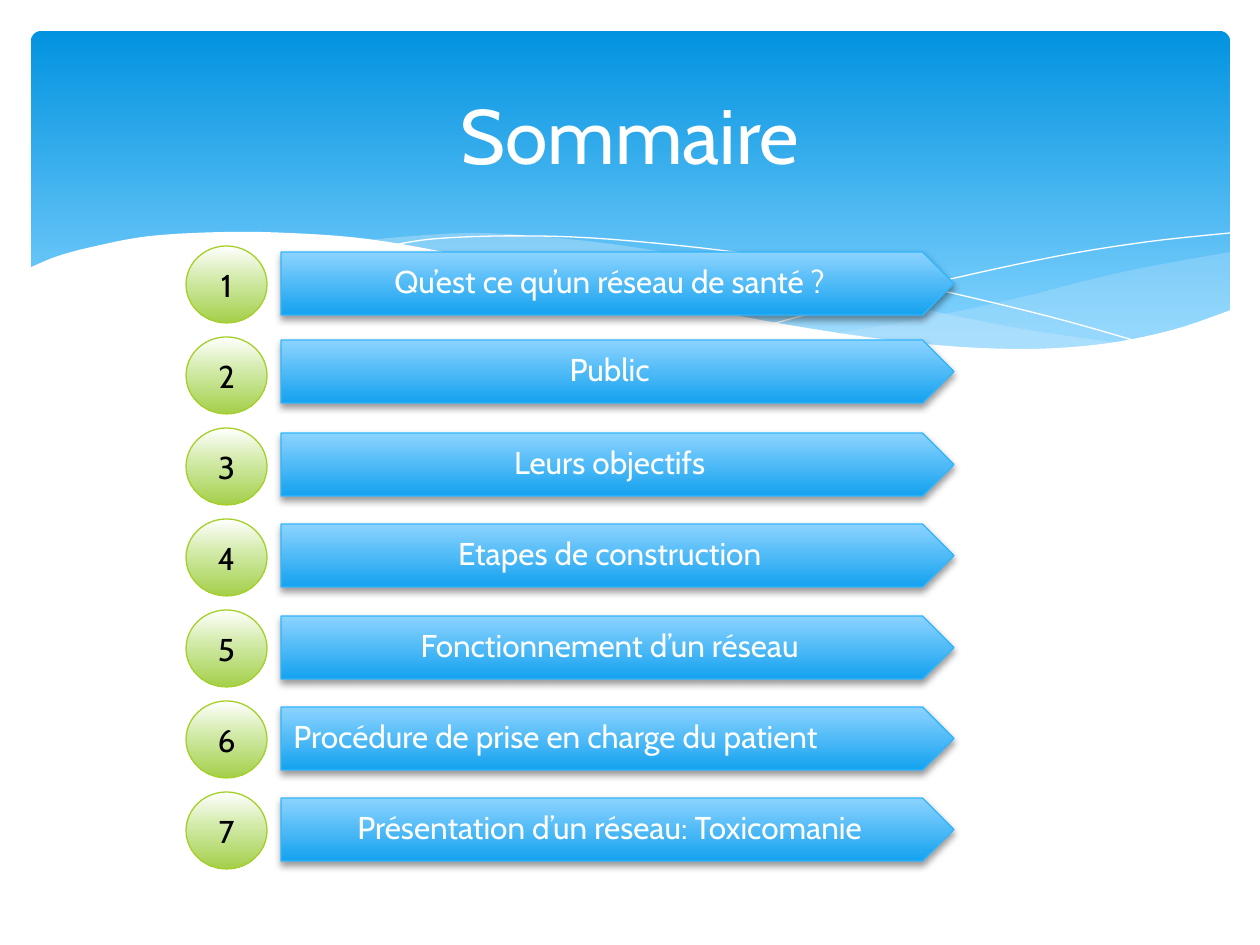
from lxml import etree
from pptx import Presentation
from pptx.dml.color import RGBColor
from pptx.enum.shapes import MSO_SHAPE as Preset
from pptx.enum.text import MSO_ANCHOR as Anchor, PP_ALIGN as Align
from pptx.oxml.ns import qn
from pptx.util import Inches, Pt

EMU_PER_PX = 914400 / 126
FONT = "Cabin"
WHITE = RGBColor(0xFF, 0xFF, 0xFF)
BLACK = RGBColor(0x00, 0x00, 0x00)
PALE_BLUE = RGBColor(0xC6, 0xE7, 0xFC)
LIME = RGBColor(0xA5, 0xD0, 0x28)
SKY = RGBColor(0x31, 0xB6, 0xFD)
BANNER_STOPS = [(0, RGBColor(0x02, 0x93, 0xE0)), (90, RGBColor(0x83, 0xD3, 0xFE))]
BADGE_STOPS = [(0, WHITE), (44, RGBColor(0xD1, 0xEA, 0xA7)), (100, RGBColor(0xA4, 0xCF, 0x4A))]
ARROW_STOPS = [(0, RGBColor(0x8C, 0xD3, 0xFF)), (100, RGBColor(0x14, 0xA2, 0xEF))]

RIGHT_SWELL = [
    [(1230, 252), (1142, 268), (1085, 281), (1014, 299), (919, 319), (833, 334)],
    [(833, 334), (906, 343), (984, 349), (1052, 349), (1110, 344), (1169, 331), (1230, 311)],
]
MIDDLE_SWELL = [
    [(1125, 344), (1017, 328), (890, 302), (793, 280), (717, 262), (632, 247),
     (557, 238), (479, 233), (413, 236), (360, 241)],
    [(360, 241), (456, 255), (566, 280), (713, 312), (819, 333), (910, 345),
     (989, 350), (1056, 350), (1125, 344)],
]
FALLING_LINE = [[(389, 246), (433, 239), (505, 236), (591, 238), (701, 248), (801, 262),
                 (916, 285), (1047, 316), (1143, 343)]]
RISING_LINE = [[(772, 324), (847, 304), (942, 281), (1053, 257), (1146, 242), (1230, 233)]]
WHITE_WAVE = [
    [(1231, 310), (1172, 330), (1102, 344), (1019, 349), (915, 343), (789, 325),
     (667, 301), (563, 277), (460, 255), (368, 239), (290, 233), (223, 232),
     (150, 236), (96, 246), (58, 256), (29, 268)],
    [(29, 415), (1231, 415)],
]
TOPICS = [
    (252, "Qu’est ce qu’un réseau de santé ?", Align.CENTER),
    (340, "Public", Align.CENTER),
    (433, "Leurs objectifs", Align.CENTER),
    (524, "Etapes de construction", Align.CENTER),
    (616, "Fonctionnement d’un réseau", Align.CENTER),
    (707, "Procédure de prise en charge du patient", Align.LEFT),
    (798, "Présentation d’un réseau: Toxicomanie", Align.CENTER),
]


def px(*lengths):
    return [round(length * EMU_PER_PX) for length in lengths]


def smooth(knots, steps=5):
    padded = [knots[0], *knots, knots[-1]]
    points = [knots[0]]
    for a, b, c, d in zip(padded, padded[1:], padded[2:], padded[3:]):
        for step in range(1, steps + 1):
            t = step / steps
            points.append(tuple(
                (2 * q + (r - p) * t + (2 * p - 5 * q + 4 * r - s) * t**2
                 + (3 * q - p - 3 * r + s) * t**3) / 2
                for p, q, r, s in zip(a, b, c, d)))
    return points


def write_text(shape, text, size=18, color=WHITE, align=Align.CENTER, spacing=None):
    frame = shape.text_frame
    frame.word_wrap = True
    frame.vertical_anchor = Anchor.MIDDLE
    paragraph = frame.paragraphs[0]
    paragraph.alignment = align
    paragraph.line_spacing = spacing
    run = paragraph.add_run()
    run.text = text
    run.font.name = FONT
    run.font.size = Pt(size)
    run.font.color.rgb = color


def add_node(parent, tag, **attributes):
    node = etree.SubElement(parent, qn(tag))
    for name, value in attributes.items():
        node.set(name, str(value))
    return node


def add_color(parent, color, opacity=100):
    node = add_node(parent, "a:srgbClr", val=color)
    if opacity < 100:
        add_node(node, "a:alpha", val=opacity * 1000)


class SlideBuilder:
    def __init__(self, slide):
        self.slide = slide
        self.shapes = slide.shapes

    def title(self, text, *box):
        title = self.shapes.title
        title.left, title.top, title.width, title.height = px(*box)
        write_text(title, text, size=44)
        element = title._element
        element.getparent().append(element)

    def gradient_shape(self, preset, box, stops, line=None):
        shape = self.shapes.add_shape(preset, *px(*box))
        shape.shadow.inherit = False
        shape.fill.gradient()
        shape.fill.gradient_angle = 270
        stop_list = shape._element.spPr.find(qn("a:gradFill")).find(qn("a:gsLst"))
        for stop in list(stop_list):
            stop_list.remove(stop)
        for position, color in stops:
            add_color(add_node(stop_list, "a:gs", pos=position * 1000), color)
        if line is None:
            shape.line.fill.background()
        else:
            shape.line.color.rgb = line
            shape.line.width = Pt(0.75)
        return shape

    def curve(self, sections, fill=None, opacity=100):
        points = [point for knots in sections for point in smooth(knots)]
        vertices = [px(*point) for point in points]
        builder = self.shapes.build_freeform(*vertices[0])
        builder.add_line_segments(vertices[1:], close=fill is not None)
        shape = builder.convert_to_shape()
        shape.shadow.inherit = False
        if fill is None:
            shape.fill.background()
            shape.line.color.rgb = WHITE
            shape.line.width = Pt(0)
            return
        shape.line.fill.background()
        shape.fill.solid()
        shape.fill.fore_color.rgb = fill
        solid = shape._element.spPr.find(qn("a:solidFill"))
        solid.remove(solid[0])
        add_color(solid, fill, opacity)

    def badge(self, number, *box):
        shape = self.gradient_shape(Preset.OVAL, box, BADGE_STOPS, LIME)
        write_text(shape, str(number), color=BLACK)

    def arrow(self, text, align, *box):
        shape = self.gradient_shape(Preset.PENTAGON, box, ARROW_STOPS, SKY)
        effects = shape._element.spPr.find(qn("a:effectLst"))
        shadow = add_node(effects, "a:outerShdw", blurRad=Pt(4), dist=Pt(2),
                          dir=5400000, rotWithShape=0)
        add_color(shadow, BLACK, 38)
        write_text(shape, text, align=align, spacing=0.9)


def main():
    presentation = Presentation()
    presentation.slide_width, presentation.slide_height = Inches(10), Inches(7.5)
    builder = SlideBuilder(presentation.slides.add_slide(presentation.slide_layouts[5]))

    banner = builder.gradient_shape(Preset.ROUNDED_RECTANGLE, (31, 31, 1199, 340), BANNER_STOPS)
    banner.adjustments[0] = 0.03
    builder.curve(RIGHT_SWELL, PALE_BLUE, 29)
    builder.curve(MIDDLE_SWELL, PALE_BLUE, 40)
    builder.curve(FALLING_LINE)
    builder.curve(RISING_LINE)
    builder.curve(WHITE_WAVE, WHITE)

    builder.title("Sommaire", 63, 47, 1134, 173)
    for index in range(len(TOPICS)):
        builder.badge(index + 1, 186, 246 + 91 * index, 81, 77)
    for top, text, align in TOPICS:
        builder.arrow(text, align, 281, top, 673, 63)

    presentation.save("out.pptx")


if __name__ == "__main__":
    main()
